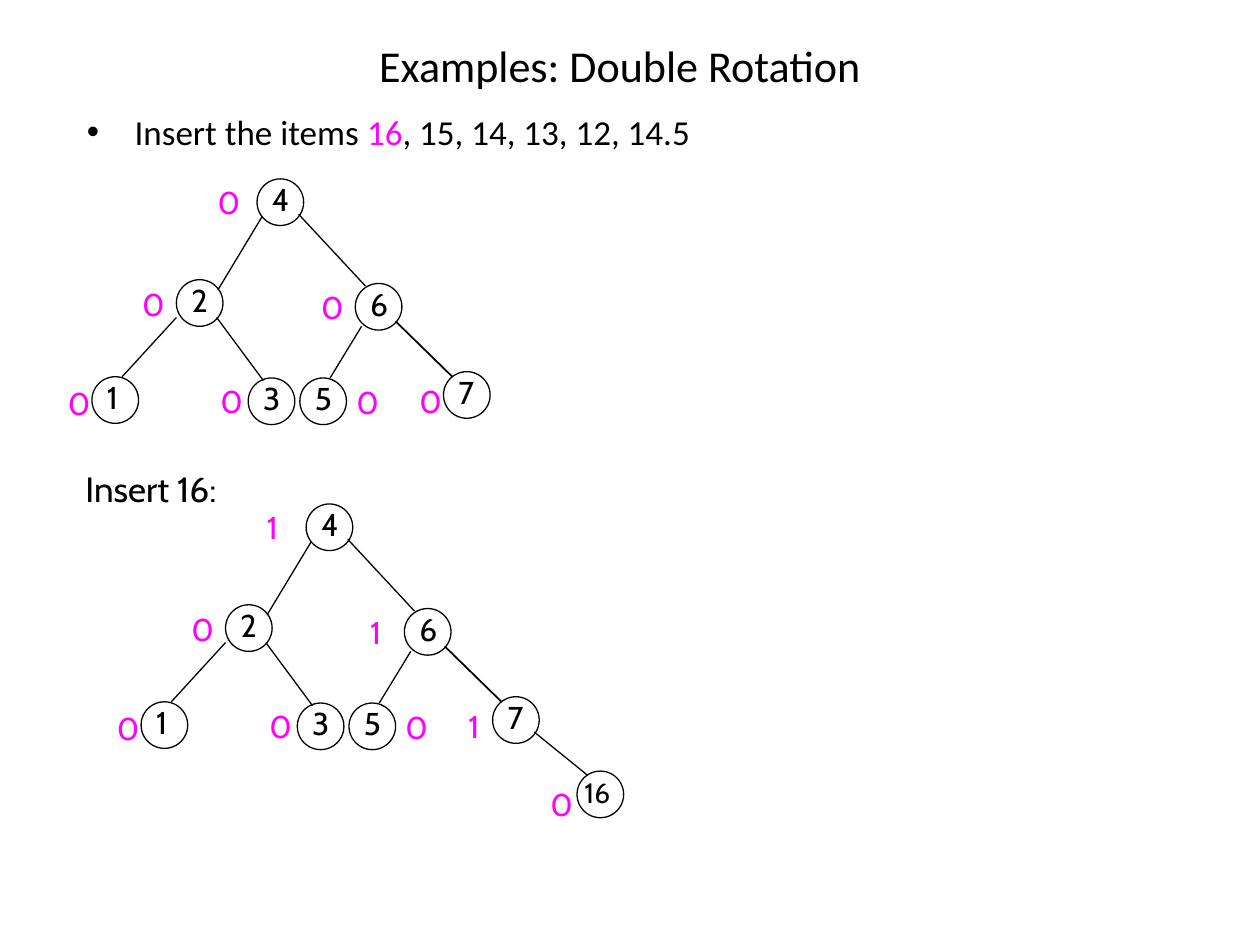
from lxml.etree import SubElement
from pptx import Presentation
from pptx.dml.color import RGBColor
from pptx.enum.shapes import MSO_CONNECTOR, MSO_SHAPE
from pptx.enum.text import MSO_ANCHOR, MSO_AUTO_SIZE, PP_ALIGN
from pptx.oxml.ns import qn
from pptx.util import Inches, Pt

BLACK = RGBColor(0, 0, 0)
PINK = RGBColor(255, 0, 255)
SIZE = 0.37  # node diameter

TITLE = "Examples: Double Rotation"
ITEMS = [("Insert the items ", BLACK), ("16", PINK),
         (", 15, 14, 13, 12, 14.5", BLACK)]
STEP = "Insert 16:"

# key: node left, top; height label left, top
NODES = {
    "4": (2.04, 1.42, 1.63, 1.40),
    "2": (1.40, 2.22, 1.03, 2.21),
    "6": (2.82, 2.25, 2.45, 2.24),
    "1": (0.73, 2.99, 0.44, 3.00),
    "3": (1.97, 3.00, 1.65, 2.98),
    "5": (2.38, 3.00, 2.73, 2.99),
    "7": (3.52, 2.95, 3.23, 2.98),
}
ADDED = {"16": (4.19, 3.54, 3.88, 3.60)}

# x1, y1, x2, y2, width in points
EDGES = [
    (2.08, 1.72, 1.73, 2.30, 0.75),
    (2.37, 1.70, 2.90, 2.27, 0.75),
    (1.40, 2.52, 0.97, 2.99, 0.75),
    (1.72, 2.52, 2.09, 3.02, 0.75),
    (2.87, 2.59, 2.62, 3.00, 0.75),
    (3.14, 2.55, 3.59, 2.99, 1),
]
LINK = (3.85, 3.23, 4.27, 3.57, 0.75)

# nodes, edges, keys whose height is 1, shift right, shift down
TREES = [
    (NODES, EDGES, (), 0, 0),
    (NODES | ADDED, EDGES + [LINK], ("4", "6", "7"), 0.39, 2.58),
]


def add_text(shapes, box, runs, size, font, wrap=False):
    shape = shapes.add_textbox(*map(Inches, box))
    frame = shape.text_frame
    frame.word_wrap = wrap
    frame.auto_size = MSO_AUTO_SIZE.NONE if wrap else MSO_AUTO_SIZE.SHAPE_TO_FIT_TEXT
    para = frame.paragraphs[0]
    for text, color in runs:
        run = para.add_run()
        run.text = text
        run.font.color.rgb = color
    return frame, para, (size, font)


def set_font(para, style):
    size, name = style
    para.font.size = Pt(size)
    para.font.name = name


def add_label(shapes, box, text, size=18, color=BLACK):
    _, para, style = add_text(shapes, box, [(text, color)], size, "Cabin")
    set_font(para, style)


def add_node(shapes, key, x, y):
    group = shapes.add_group_shape().shapes
    oval = group.add_shape(MSO_SHAPE.OVAL, *map(Inches, (x, y, SIZE, SIZE)))
    oval.shadow.inherit = False
    oval.fill.background()
    oval.line.color.rgb = BLACK
    oval.line.width = Pt(0.75)
    if len(key) == 1:
        add_label(group, (x + 0.02, y - 0.04, 0.34, 0.4), key)
    else:
        add_label(group, (x - 0.04, y - 0.01, 0.44, 0.37), key, 16)


def add_edge(shapes, x1, y1, x2, y2, width):
    line = shapes.add_connector(MSO_CONNECTOR.STRAIGHT,
                                *map(Inches, (x1, y1, x2, y2)))
    line.line.color.rgb = BLACK
    line.line.width = Pt(width)
    SubElement(line._element.spPr, qn("a:effectLst"))


def add_tree(shapes, nodes, edges, tall, dx, dy):
    for x1, y1, x2, y2, width in edges:
        add_edge(shapes, x1 + dx, y1 + dy, x2 + dx, y2 + dy, width)
    for key, (x, y, left, top) in nodes.items():
        add_node(shapes, key, x + dx, y + dy)
        add_label(shapes, (left + dx, top + dy, 0.34, 0.4),
                  "1" if key in tall else "0", color=PINK)


def add_bullet(para, indent):
    props = para._p.get_or_add_pPr()
    props.set("marL", str(Inches(indent)))
    props.set("indent", str(Inches(-indent)))
    SubElement(props, qn("a:buFont")).set("typeface", "Arial")
    SubElement(props, qn("a:buChar")).set("char", "•")


def main():
    deck = Presentation()
    deck.slide_width, deck.slide_height = Inches(10), Inches(7.5)
    shapes = deck.slides.add_slide(deck.slide_layouts[6]).shapes

    frame, para, style = add_text(shapes, (0.67, 0.33, 8.5, 0.37),
                                  [(TITLE, BLACK)], 25.2, "Calibri", True)
    frame.vertical_anchor = MSO_ANCHOR.MIDDLE
    para.alignment = PP_ALIGN.CENTER
    set_font(para, style)

    _, para, style = add_text(shapes, (0.59, 0.83, 8.98, 0.57),
                              ITEMS, 20, "Calibri", True)
    add_bullet(para, 0.38)
    set_font(para, style)

    add_label(shapes, (0.58, 3.66, 1.41, 0.43), STEP, 20)
    for tree in TREES:
        add_tree(shapes, *tree)
    deck.save("out.pptx")


if __name__ == "__main__":
    main()
